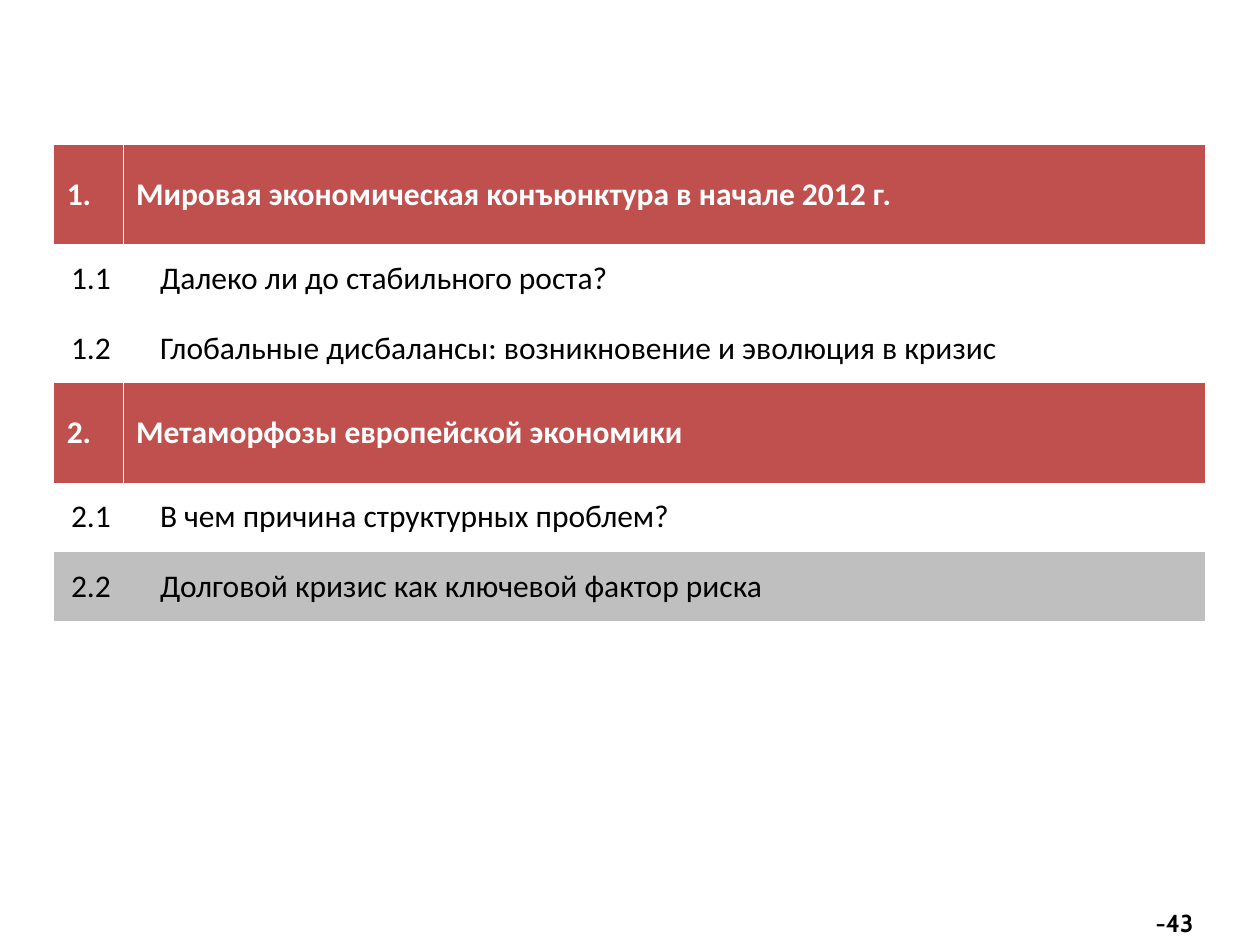
import pptx
import pptx.util
import pptx.dml.color
import pptx.enum.text
import pptx.oxml
import pptx.oxml.ns
from lxml import etree

Inches = pptx.util.Inches
ALIGN = pptx.enum.text.PP_ALIGN
MIDDLE = pptx.enum.text.MSO_ANCHOR.MIDDLE

RED, GREY, WHITE, BLACK = "C0504D", "BFBFBF", "FFFFFF", "000000"
SECTION_HEIGHT, TOPIC_HEIGHT = 0.79, 0.55
COLUMNS = (0.55, 8.58)
PLAIN_TABLE = "{2D5ABB26-0587-4C30-8999-92F81FD0307C}"

# Number, heading, highlighted as the current topic
AGENDA = [
    ("1.", "Мировая экономическая конъюнктура в начале 2012 г.", False),
    ("1.1", "Далеко ли до стабильного роста?", False),
    ("1.2", "Глобальные дисбалансы: возникновение и эволюция в кризис", False),
    ("2.", "Метаморфозы европейской экономики", False),
    ("2.1", "В чем причина структурных проблем?", False),
    ("2.2", "Долговой кризис как ключевой фактор риска", True),
]


def color(value):
    return pptx.dml.color.RGBColor.from_string(value)


def add_span(para, text, size, font, ink, bold):
    span = para.add_run()
    span.text = text
    span.font.size = pptx.util.Pt(size)
    span.font.name = font
    span.font.bold = bold
    span.font.color.rgb = color(ink)


def set_fill(cell, value):
    if value:
        cell.fill.solid()
        cell.fill.fore_color.rgb = color(value)
    else:
        cell.fill.background()


def add_border(cell, side):
    """Draw a thin white border; borders precede the fill in the cell XML."""
    line = pptx.oxml.parse_xml(
        f'<a:{side} {pptx.oxml.ns.nsdecls("a")} w="12700"><a:solidFill>'
        f'<a:srgbClr val="{WHITE}"/></a:solidFill></a:{side}>')
    cell._tc.get_or_add_tcPr().insert(0, line)


def fill_row(cells, number, heading, current):
    is_section = number.endswith(".")
    background = RED if is_section else GREY if current else None
    for cell, text, side in zip(cells, (number, heading), ("lnR", "lnL")):
        set_fill(cell, background)
        cell.vertical_anchor = MIDDLE
        para = cell.text_frame.paragraphs[0]
        add_span(para, text, 18, "Calibri",
                 WHITE if is_section else BLACK, is_section)
        if is_section:
            add_border(cell, side)
        elif text == number:
            para.alignment = ALIGN.RIGHT
        else:
            properties = para._p.get_or_add_pPr()
            properties.set("marL", str(Inches(0.19)))
            properties.set("indent", "0")


def add_agenda(page):
    heights = [SECTION_HEIGHT if number.endswith(".") else TOPIC_HEIGHT
               for number, _, _ in AGENDA]
    frame = page.shapes.add_table(
        len(AGENDA), len(COLUMNS), Inches(0.43), Inches(1.15),
        Inches(sum(COLUMNS)), Inches(sum(heights)))
    table = frame.table
    table.first_row = table.horz_banding = False
    style = table._tbl.tblPr.find(pptx.oxml.ns.qn("a:tableStyleId"))
    style.text = PLAIN_TABLE
    for column, width in zip(table.columns, COLUMNS):
        column.width = Inches(width)
    for row, height, entry in zip(table.rows, heights, AGENDA):
        row.height = Inches(height)
        fill_row(list(row.cells), *entry)


def add_page_number(page, text):
    box = page.shapes.add_textbox(
        Inches(9.02), Inches(7.14), Inches(0.55), Inches(0.37))
    box.text_frame.word_wrap = True
    box.text_frame.vertical_anchor = MIDDLE
    para = box.text_frame.paragraphs[0]
    para.alignment = ALIGN.RIGHT
    add_span(para, text, 14, "Cabin", BLACK, True)


def main():
    deck = pptx.Presentation()
    deck.slide_width, deck.slide_height = Inches(10), Inches(7.5)
    page = deck.slides.add_slide(deck.slide_layouts[6])
    add_agenda(page)
    add_page_number(page, "-43")
    deck.save("out.pptx")


if __name__ == "__main__":
    main()
